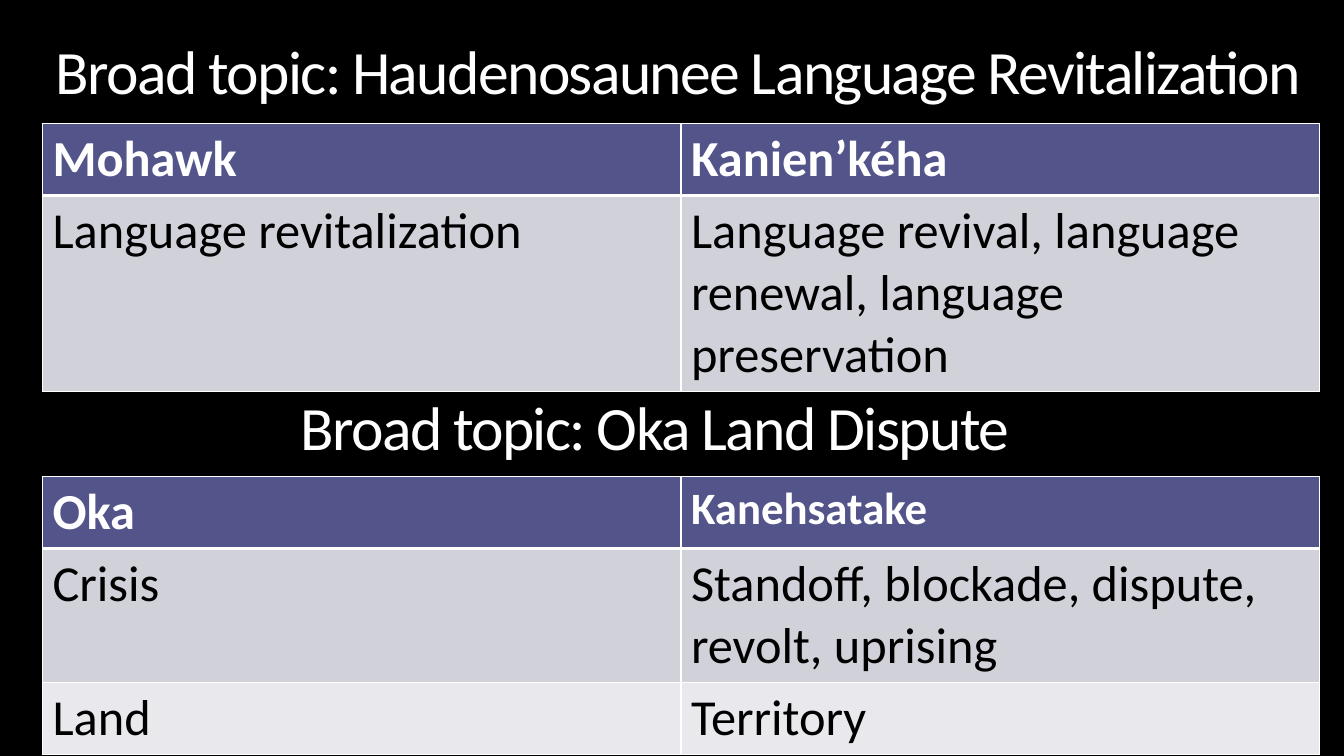
import pptx
import pptx.dml.color
import pptx.enum.text
import pptx.oxml
import pptx.oxml.ns
import pptx.util

Cm = pptx.util.Cm
Pt = pptx.util.Pt

WHITE, BLACK, HEADER = "FFFFFF", "000000", "53548A"
BANDS = ("D1D1DA", "E9E9ED")
HEADING_FORMAT = {"name": "Calibri", "size": Pt(44), "bold": False}
CELL_FORMAT = {"name": "Calibri", "size": Pt(36)}
FRAME_FORMAT = {
    "word_wrap": True,
    "auto_size": pptx.enum.text.MSO_AUTO_SIZE.NONE,
    "vertical_anchor": pptx.enum.text.MSO_ANCHOR.MIDDLE,
}
HEADING_WIDTH, HEADING_HEIGHT = Cm(33.22), Cm(3.81)
TABLE_LEFT, COLUMN_WIDTH = Cm(1.07), Cm(16.09)


def paint(color_format, hex_color):
    color_format.rgb = pptx.dml.color.RGBColor.from_string(hex_color)


def apply(target, values):
    for name, value in values.items():
        setattr(target, name, value)


def write_heading(heading, wording):
    frame = heading.text_frame
    apply(frame, FRAME_FORMAT)
    line = frame.paragraphs[0]
    apply(line, {"alignment": pptx.enum.text.PP_ALIGN.CENTER, "line_spacing": 0.85})
    run = line.add_run()
    run.text = wording
    apply(run.font, HEADING_FORMAT)
    paint(run.font.color, WHITE)
    run.font._element.set("spc", "-120")


def add_borders(cell, widths):
    properties = cell._tc.get_or_add_tcPr()
    namespace = pptx.oxml.ns.nsdecls("a")
    for index, (side, width) in enumerate(widths.items()):
        border = pptx.oxml.parse_xml(
            f'<a:{side} {namespace} w="{Pt(width)}"><a:solidFill>'
            f'<a:srgbClr val="{WHITE}"/></a:solidFill></a:{side}>'
        )
        properties.insert(index, border)


def fill_cell(cell, wording, row, size):
    is_header = row == 0
    cell.fill.solid()
    paint(cell.fill.fore_color, HEADER if is_header else BANDS[(row - 1) % 2])
    run = cell.text_frame.paragraphs[0].add_run()
    run.text = wording
    apply(run.font, CELL_FORMAT | {"bold": is_header, "size": size})
    paint(run.font.color, WHITE if is_header else BLACK)
    top = 3 if row == 1 else 1
    bottom = 3 if is_header else 1
    add_borders(cell, {"lnL": 1, "lnR": 1, "lnT": top, "lnB": bottom})


def add_term_table(slide, top, heights, terms, sizes=None):
    sizes = sizes or {}
    frame = slide.shapes.add_table(
        len(terms), 2, TABLE_LEFT, top, 2 * COLUMN_WIDTH, sum(heights)
    )
    table = frame.table
    for column in table.columns:
        column.width = COLUMN_WIDTH
    for row, (height, pair) in enumerate(zip(heights, terms)):
        table.rows[row].height = height
        for column, wording in enumerate(pair):
            size = sizes.get((row, column), CELL_FORMAT["size"])
            fill_cell(table.cell(row, column), wording, row, size)


def main():
    deck = pptx.Presentation()
    apply(deck, {"slide_width": Cm(33.87), "slide_height": Cm(19.05)})
    slide = deck.slides.add_slide(deck.slide_layouts[5])
    slide.background.fill.solid()
    paint(slide.background.fill.fore_color, BLACK)

    language_heading = slide.shapes.title
    apply(language_heading, {
        "left": Cm(0.64), "top": Cm(0),
        "width": HEADING_WIDTH, "height": HEADING_HEIGHT,
    })
    write_heading(language_heading, "Broad topic: Haudenosaunee Language Revitalization ")
    add_term_table(slide, Cm(3.12), [Cm(1.78), Cm(4.94)], [
        ("Mohawk", "Kanienʼkéha"),
        ("Language revitalization",
         "Language revival, language renewal, language preservation"),
    ])

    land_heading = slide.shapes.add_textbox(
        Cm(0.05), Cm(8.97), HEADING_WIDTH, HEADING_HEIGHT
    )
    write_heading(land_heading, "Broad topic: Oka Land Dispute ")
    add_term_table(slide, Cm(12.01), [Cm(1.78), Cm(3.38), Cm(1.8)], [
        ("Oka", "Kanehsatake"),
        ("Crisis", "Standoff, blockade, dispute, revolt, uprising"),
        ("Land", "Territory"),
    ], {(0, 1): Pt(32)})

    deck.save("out.pptx")


if __name__ == "__main__":
    main()
